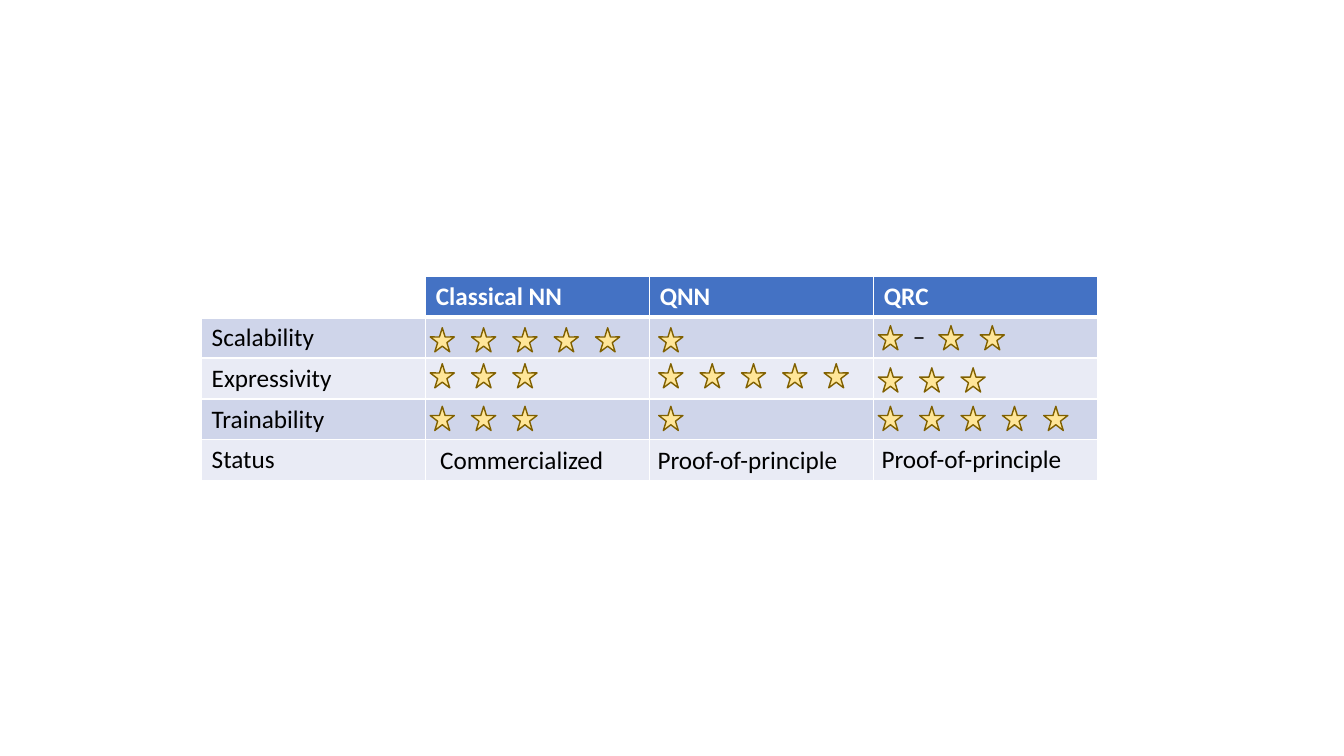
from lxml import etree
from pptx import Presentation
from pptx.dml.color import RGBColor
from pptx.enum.shapes import MSO_SHAPE
from pptx.oxml.ns import qn
from pptx.util import Inches, Pt

STAR = MSO_SHAPE.STAR_5_POINT
WHITE = RGBColor(0xFF, 0xFF, 0xFF)
BLACK = RGBColor(0x00, 0x00, 0x00)
HEADER_BLUE = RGBColor(0x44, 0x72, 0xC4)
BAND_DARK = RGBColor(0xCF, 0xD5, 0xEA)
BAND_LIGHT = RGBColor(0xE9, 0xEB, 0xF5)
STAR_GOLD = RGBColor(0xFF, 0xE6, 0x99)
STAR_OUTLINE = RGBColor(0x80, 0x60, 0x00)

METHODS = ["Classical NN", "QNN", "QRC"]
CRITERIA = ["Scalability", "Expressivity", "Trainability", "Status"]

# Grid column, grid row, number of stars
RATINGS = [
    (1.02, 1.26, 5), (2.04, 1.26, 1),
    (2.04, 2.14, 5), (3.02, 2.24, 3),
    (1.02, 3.18, 3), (2.04, 3.18, 1), (3.02, 3.18, 5),
    (1.02, 2.14, 3),
]
STATUSES = [
    (1.02, 3.99, "Commercialized"),
    (1.99, 3.99, "Proof-of-principle"),
    (2.99, 3.97, "Proof-of-principle"),
]


class ComparisonSlide:
    """Draws on one slide, placing everything in table columns and rows."""

    FONT = "Calibri"
    TEXT_SIZE = Pt(18)
    LEFT, TOP = Inches(2), Inches(2.74)
    WIDTH, HEIGHT = Inches(8.89), Inches(2.03)
    COLUMN = WIDTH / 4
    ROW = HEIGHT / 5
    STAR_SIZE, STAR_PITCH = Inches(0.24), Inches(0.41)

    def __init__(self, slide):
        self.shapes = slide.shapes

    def x(self, column):
        return round(self.LEFT + column * self.COLUMN)

    def y(self, row):
        return round(self.TOP + row * self.ROW)

    def set_text(self, frame, text, color=BLACK, bold=False):
        frame.text = text
        for run in frame.paragraphs[0].runs:
            run.font.name = self.FONT
            run.font.size = self.TEXT_SIZE
            run.font.bold = bold
            run.font.color.rgb = color

    def border(self, cell, side, points):
        line = etree.SubElement(cell._tc.get_or_add_tcPr(), qn(f"a:ln{side}"),
                                w=str(Pt(points)))
        fill = etree.SubElement(line, qn("a:solidFill"))
        etree.SubElement(fill, qn("a:srgbClr"), val=str(WHITE))

    def table(self, rows):
        table = self.shapes.add_table(len(rows), len(rows[0]), self.LEFT, self.TOP,
                                      self.WIDTH, self.HEIGHT).table
        table.first_row = table.horz_banding = False
        for r, labels in enumerate(rows):
            for c, label in enumerate(labels):
                cell = table.cell(r, c)
                for side in "LRTB":
                    under_header = (r, side) in ((0, "B"), (1, "T"))
                    self.border(cell, side, 3 if under_header else 1)
                cell.fill.solid()
                if r == 0:
                    cell.fill.fore_color.rgb = HEADER_BLUE if label else WHITE
                else:
                    cell.fill.fore_color.rgb = BAND_DARK if r % 2 else BAND_LIGHT
                if label:
                    self.set_text(cell.text_frame, label,
                                  BLACK if r else WHITE, bold=r == 0)

    def stars(self, shapes, column, row, count):
        for i in range(count):
            star = shapes.add_shape(STAR, self.x(column) + i * self.STAR_PITCH,
                                    self.y(row), self.STAR_SIZE, self.STAR_SIZE)
            star.shadow.inherit = False
            star.fill.solid()
            star.fill.fore_color.rgb = STAR_GOLD
            star.line.color.rgb = STAR_OUTLINE
            star.line.width = Pt(1)

    def rating(self, column, row, count):
        shapes = self.shapes if count == 1 else self.shapes.add_group_shape().shapes
        self.stars(shapes, column, row, count)

    def rating_range(self, column, row):
        """One star, a dash and two stars, grouped."""
        shapes = self.shapes.add_group_shape().shapes
        self.stars(shapes, column + 0.27, row, 2)
        self.stars(shapes, column, row, 1)
        self.text(shapes, column + 0.11, row - 0.25, 0.22, "–")

    def text(self, shapes, column, row, columns, text):
        box = shapes.add_textbox(self.x(column), self.y(row),
                                 round(columns * self.COLUMN), round(self.ROW))
        box.text_frame.word_wrap = True
        self.set_text(box.text_frame, text)


def main():
    deck = Presentation()
    deck.slide_width, deck.slide_height = Inches(13.33), Inches(7.5)
    comparison = ComparisonSlide(deck.slides.add_slide(deck.slide_layouts[6]))
    blanks = [""] * len(METHODS)
    comparison.table([["", *METHODS]] + [[name, *blanks] for name in CRITERIA])
    for column, row, count in RATINGS:
        comparison.rating(column, row, count)
    comparison.rating_range(3.02, 1.21)
    for column, row, status in STATUSES:
        comparison.text(comparison.shapes, column, row, 0.96, status)
    deck.save("out.pptx")


if __name__ == "__main__":
    main()
